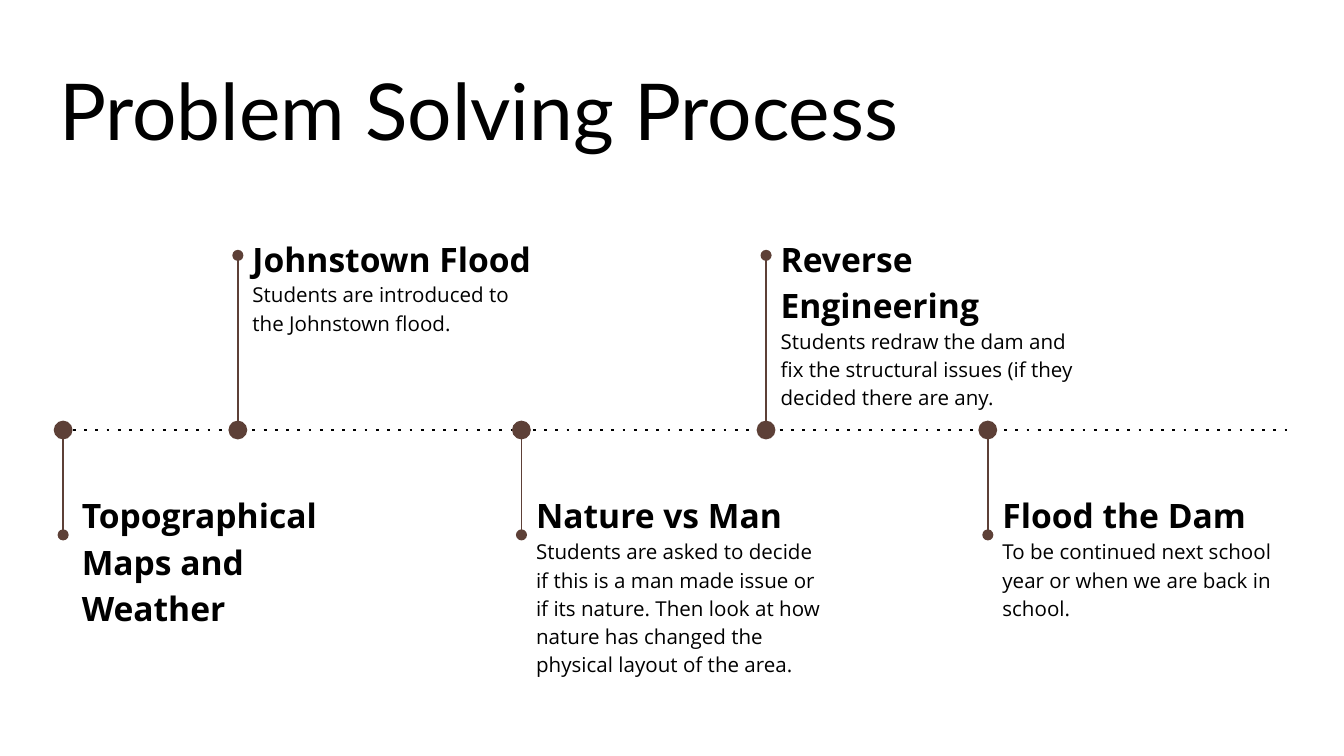
"""Build the Problem Solving Process timeline slide."""
from dataclasses import dataclass

from lxml.etree import SubElement
from pptx import Presentation
from pptx.dml.color import RGBColor
from pptx.enum.shapes import MSO_CONNECTOR, MSO_SHAPE
from pptx.enum.text import MSO_ANCHOR as Anchor, MSO_AUTO_SIZE as AutoSize, PP_ALIGN as Align
from pptx.oxml.ns import qn
from pptx.shapes.connector import Connector
from pptx.slide import Slide
from pptx.text.text import TextFrame
from pptx.util import Inches, Pt

COLORS = {"text": "000000", "marker": "5D4037"}
AXIS_Y = 3.2
DOT_SIZE = 0.14
TEXT_WIDTH = 2.38


@dataclass(frozen=True)
class Line:
    """One paragraph of text with its look."""
    text: str
    size: float
    bold: bool = False
    font: str = "Open Sans"
    spacing: float = 1.15


@dataclass(frozen=True)
class Side:
    """Vertical layout of a milestone above or below the axis."""
    stem_start: float
    stem_end: float
    text_top: float
    text_height: float


@dataclass(frozen=True)
class Milestone:
    """One step on the timeline."""
    x: float
    side: Side
    headings: tuple[str, ...]
    detail: str = ""
    text_gap: float = 0.01


ABOVE = Side(AXIS_Y - DOT_SIZE / 2, 1.9, 1.63, 1.2)
BELOW = Side(AXIS_Y + DOT_SIZE / 2, 3.98, 3.54, 1.32)

MILESTONES = (
    Milestone(0.47, BELOW, ("Topographical", "Maps and Weather"), text_gap=0.04),
    Milestone(1.77, ABOVE, ("Johnstown Flood",),
              "Students are introduced to the Johnstown flood."),
    Milestone(3.88, BELOW, ("Nature vs Man",),
              "Students are asked to decide if this is a man made issue or if its nature. "
              "Then look at how nature has changed the physical layout of the area."),
    Milestone(5.7, ABOVE, ("Reverse Engineering",),
              "Students redraw the dam and fix the structural issues "
              "(if they decided there are any."),
    Milestone(7.35, BELOW, ("Flood the Dam",),
              "To be continued next school year or when we are back in school."),
)


def color(name: str) -> RGBColor:
    """Return a named colour."""
    return RGBColor.from_string(COLORS[name])


def write_text(frame: TextFrame, lines: list[Line], anchor: Anchor) -> None:
    """Fill a text frame with left-aligned paragraphs."""
    frame.word_wrap = True
    frame.auto_size = AutoSize.NONE
    frame.vertical_anchor = anchor
    frame.margin_left = frame.margin_right = Inches(0.1)
    frame.margin_top = frame.margin_bottom = Inches(0.1)
    for index, line in enumerate(lines):
        para = frame.add_paragraph() if index else frame.paragraphs[0]
        para.alignment = Align.LEFT
        para.line_spacing = line.spacing
        para.space_before = para.space_after = Pt(0)
        span = para.add_run()
        span.text = line.text
        span.font.name = line.font
        span.font.size = Pt(line.size)
        span.font.bold = line.bold
        span.font.color.rgb = color("text")


def add_line(shapes, start: tuple[float, float], end: tuple[float, float],
             color_name: str, width: float) -> Connector:
    """Draw a straight line without a shadow."""
    line = shapes.add_connector(MSO_CONNECTOR.STRAIGHT, *map(Inches, start + end))
    line.line.color.rgb = color(color_name)
    line.line.width = Pt(width)
    SubElement(line._element.spPr, qn("a:effectLst"))
    return line


def style_line(line: Connector, tag: str, **attributes: str) -> None:
    """Add a dash or arrowhead element to a line."""
    SubElement(line.line._get_or_add_ln(), qn(tag), **attributes)


def add_milestone(page: Slide, step: Milestone) -> None:
    """Draw the dot, stem and text of one step."""
    side = step.side
    marker = page.shapes.add_group_shape()
    dot = marker.shapes.add_shape(
        MSO_SHAPE.OVAL, Inches(step.x - DOT_SIZE / 2), Inches(AXIS_Y - DOT_SIZE / 2),
        Inches(DOT_SIZE), Inches(DOT_SIZE))
    dot.shadow.inherit = False
    dot.fill.solid()
    dot.fill.fore_color.rgb = color("marker")
    dot.line.fill.background()
    stem = add_line(marker.shapes, (step.x, side.stem_start), (step.x, side.stem_end),
                    "marker", 0.75)
    style_line(stem, "a:tailEnd", type="oval")

    box = page.shapes.add_textbox(Inches(step.x + step.text_gap), Inches(side.text_top),
                                  Inches(TEXT_WIDTH), Inches(side.text_height))
    lines = [Line(heading, 18, bold=True) for heading in step.headings]
    if step.detail:
        lines.append(Line(step.detail, 11))
    write_text(box.text_frame, lines, Anchor.TOP)


def main() -> None:
    """Build and save the deck."""
    deck = Presentation()
    deck.slide_width, deck.slide_height = Inches(10), Inches(10 * 9 / 16)
    page = deck.slides.add_slide(deck.slide_layouts[5])

    title = page.shapes.title
    title.left, title.top = Inches(0.34), Inches(0.35)
    title.width, title.height = Inches(9.32), Inches(0.91)
    write_text(title.text_frame,
               [Line("Problem Solving Process", 42, font="Lato", spacing=1.0)], Anchor.BOTTOM)

    axis = add_line(page.shapes, (0.46, AXIS_Y), (9.58, AXIS_Y), "text", 1.5)
    style_line(axis, "a:prstDash", val="dot")
    for step in MILESTONES:
        add_milestone(page, step)
    deck.save("out.pptx")


if __name__ == "__main__":
    main()
